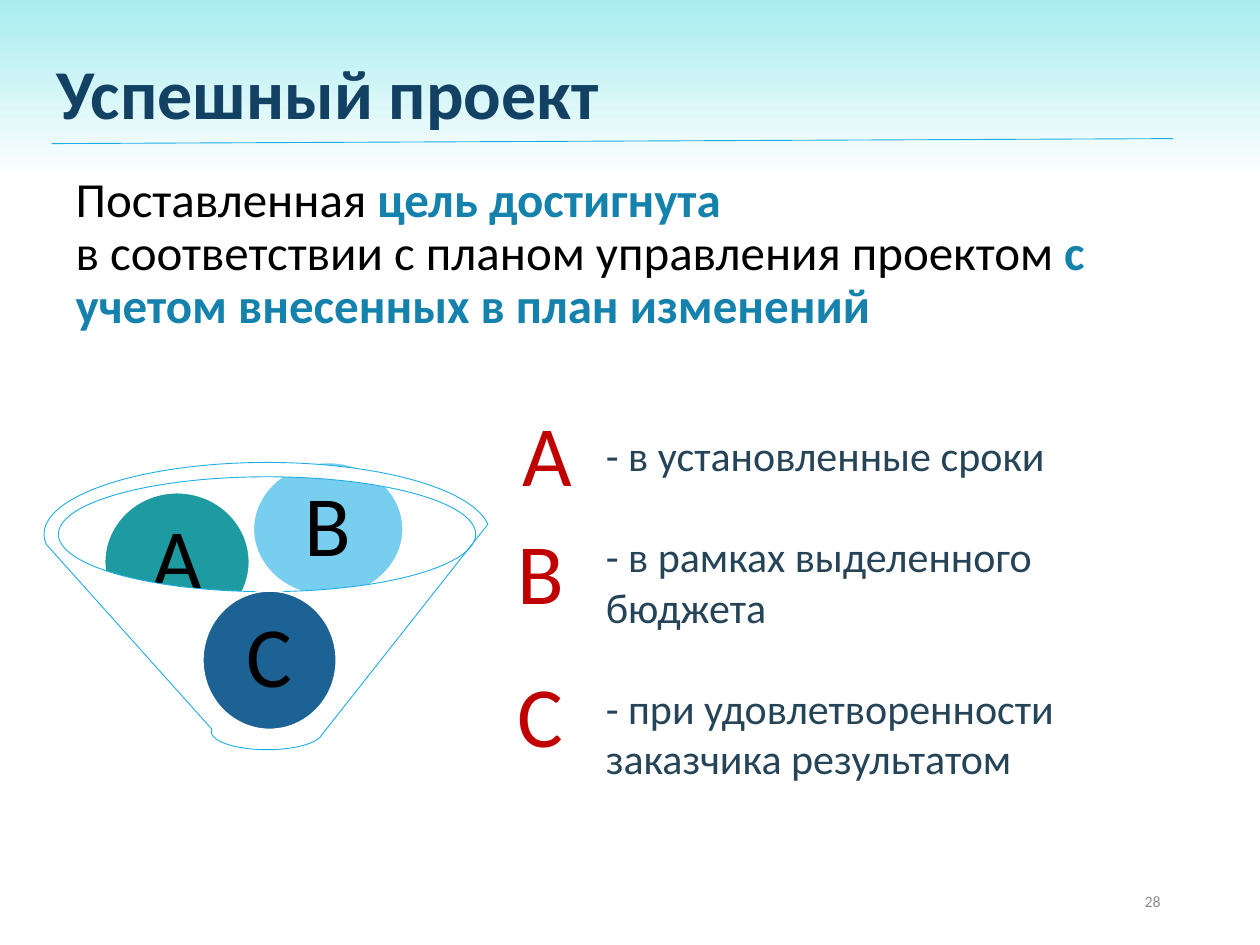
from copy import deepcopy

from pptx import Presentation
from pptx.dml.color import RGBColor
from pptx.enum.shapes import MSO_CONNECTOR as Connector, MSO_SHAPE as Shape
from pptx.enum.text import MSO_ANCHOR as Anchor, MSO_AUTO_SIZE as AutoSize, PP_ALIGN as Align
from pptx.oxml.ns import qn
from pptx.oxml.xmlchemy import OxmlElement
from pptx.util import Inches, Pt

WHITE = RGBColor(0xFF, 0xFF, 0xFF)
BLACK = RGBColor(0x00, 0x00, 0x00)
MINT = RGBColor(0xA8, 0xEC, 0xEF)
NAVY = RGBColor(0x13, 0x41, 0x63)
ACCENT = RGBColor(0x14, 0x82, 0xAC)
SLATE = RGBColor(0x26, 0x44, 0x57)
GRAY = RGBColor(0x8C, 0x8C, 0x8C)
RED = RGBColor(0xC0, 0x00, 0x00)
OUTLINE = RGBColor(0x1C, 0xAD, 0xE4)
TEAL = RGBColor(0x1D, 0x9B, 0xA1)
SKY = RGBColor(0x77, 0xCE, 0xEF)
BLUE = RGBColor(0x1D, 0x62, 0x94)

COLUMNS, ROWS = 100, 75


class SlideBuilder:
    """Places styled elements on a 100 x 75 grid."""

    font = "Calibri"
    letter_size = 49
    letter_inset = Inches(0.07)

    def __init__(self, deck):
        self.cell_width = deck.slide_width / COLUMNS
        self.cell_height = deck.slide_height / ROWS
        self.slide = deck.slides.add_slide(deck.slide_layouts[1])

    def place(self, column, row, width, height):
        return (round(column * self.cell_width), round(row * self.cell_height),
                round(width * self.cell_width), round(height * self.cell_height))

    def background(self, bottom, top, fade_start):
        fill = self.slide.background.fill
        fill.gradient()
        fill.gradient_angle = 90
        lower, upper = fill.gradient_stops
        lower.color.rgb, lower.position = bottom, 0
        upper.color.rgb, upper.position = top, 1
        stops = next(self.slide.element.iter(qn("a:gsLst")))
        middle = deepcopy(stops[0])
        middle.set("pos", str(fade_start * 1000))
        stops.insert(1, middle)

    def fill_text(self, shape, paragraphs, size, align=Align.LEFT, anchor=Anchor.TOP,
                  spacing=None, gap=0):
        """Each paragraph is a list of (text, color, bold) runs."""
        frame = shape.text_frame
        frame.word_wrap = True
        frame.auto_size = AutoSize.NONE
        frame.vertical_anchor = anchor
        for index, runs in enumerate(paragraphs):
            paragraph = frame.add_paragraph() if index else frame.paragraphs[0]
            paragraph.alignment = align
            paragraph.line_spacing = spacing
            paragraph.space_before = Pt(gap if index else 0)
            for text, color, bold in runs:
                run = paragraph.add_run()
                run.text = text
                run.font.name, run.font.size = self.font, Pt(size)
                run.font.color.rgb, run.font.bold = color, bold

    def placeholder(self, index, area, paragraphs, size, **layout):
        holder = self.slide.placeholders[index]
        holder.left, holder.top, holder.width, holder.height = self.place(*area)
        self.fill_text(holder, paragraphs, size, spacing=0.9, **layout)
        for paragraph in holder.text_frame.paragraphs:
            properties = paragraph._p.get_or_add_pPr()
            properties.set("marL", "0")
            properties.set("indent", "0")
            properties.append(OxmlElement("a:buNone"))

    def text(self, area, paragraphs, size, **layout):
        box = self.slide.shapes.add_textbox(*self.place(*area))
        self.fill_text(box, paragraphs, size, **layout)

    def shape(self, kind, area, fill, line, line_width):
        shape = self.slide.shapes.add_shape(kind, *self.place(*area))
        shape.shadow.inherit = False
        shape.fill.solid()
        shape.fill.fore_color.rgb = fill
        shape.line.color.rgb, shape.line.width = line, Pt(line_width)
        return shape

    def letter(self, shape, letter, color):
        frame = shape.text_frame
        frame.margin_left = frame.margin_right = self.letter_inset
        frame.margin_top = frame.margin_bottom = self.letter_inset
        self.fill_text(shape, [[(letter, color, False)]], self.letter_size,
                       align=Align.CENTER, anchor=Anchor.MIDDLE, spacing=0.9)

    def ball(self, area, letter, fill):
        self.letter(self.shape(Shape.OVAL, area, fill, WHITE, 1), letter, BLACK)

    def marker(self, area, letter):
        box = self.slide.shapes.add_textbox(*self.place(*area))
        self.letter(box, letter, RED)

    def line(self, start, end, color, width):
        ends = self.place(*start, *end)
        rule = self.slide.shapes.add_connector(Connector.STRAIGHT, *ends)
        rule.line.color.rgb, rule.line.width = color, Pt(width)
        rule._element.spPr.append(OxmlElement("a:effectLst"))


def main():
    deck = Presentation()
    deck.slide_width, deck.slide_height = Inches(10), Inches(7.5)
    page = SlideBuilder(deck)
    page.background(WHITE, MINT, 81)

    # Heading and definition
    page.placeholder(0, (3.5, 1.4, 83.3, 12.5),
                     [[("Успешный проект", NAVY, True)]], 40, anchor=Anchor.MIDDLE)
    page.placeholder(1, (5, 13.4, 89, 15), [
        [("Поставленная ", BLACK, False), ("цель достигнута", ACCENT, True)],
        [("в соответствии с планом управления проектом ", BLACK, False),
         ("с учетом внесенных в план изменений", ACCENT, True)],
    ], 28)

    # Page number
    page.text((70.6, 69.5, 22.5, 4), [[("28", GRAY, False)]], 9,
              align=Align.RIGHT, anchor=Anchor.MIDDLE)

    # Funnel: two balls behind it, one in front
    page.ball((8.3, 39.1, 11.5, 11), "А", TEAL)
    page.ball((20.1, 36.7, 11.9, 10.6), "В", SKY)
    page.shape(Shape.FUNNEL, (3.5, 36.7, 35.4, 22.8), WHITE, OUTLINE, 0.5)
    page.ball((16.1, 46.9, 10.6, 11), "С", BLUE)

    # Success criteria
    criteria = ["- в установленные сроки",
                "- в рамках выделенного бюджета",
                "- при удовлетворенности заказчика результатом"]
    page.text((47.1, 33.6, 44.7, 29.9),
              [[(criterion, SLATE, False)] for criterion in criteria], 24, gap=29)
    for letter, column, row in (("А", 39, 32), ("В", 38.5, 41.4), ("С", 38.5, 52.7)):
        page.marker((column, row, 8.8, 8.8), letter)

    # Rule under the heading
    page.line((4.1, 11.4), (93.1, 11), OUTLINE, 0.5)

    deck.save("out.pptx")


if __name__ == "__main__":
    main()
